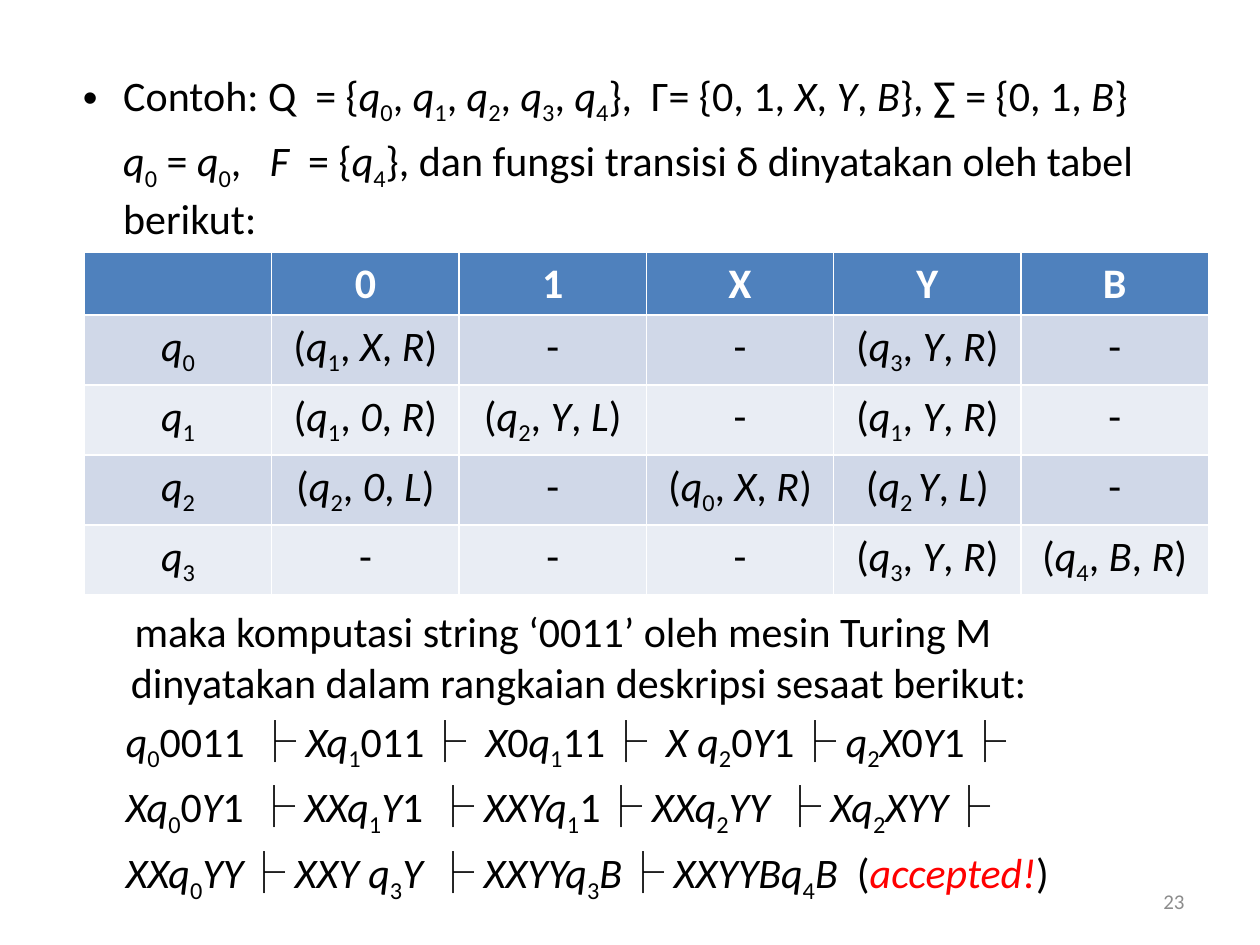
"""Build the Turing machine example slide with its transition table."""
from dataclasses import dataclass
from itertools import groupby

from lxml.etree import SubElement
from pptx import Presentation
from pptx.dml.color import RGBColor
from pptx.enum.text import MSO_ANCHOR, PP_ALIGN
from pptx.oxml.ns import qn
from pptx.util import Inches, Pt


@dataclass(frozen=True)
class Theme:
    font: str = "Calibri"
    sign: str = "Noto Sans CJK SC"
    size: int = 24
    small: int = 12
    gap: float = 4.8
    ink: str = "000000"
    light: str = "FFFFFF"
    alert: str = "FF0000"
    grey: str = "8C8C8C"
    head: str = "4F81BD"
    bands: tuple = ("D0D8E8", "E9EDF4")


@dataclass(frozen=True)
class Line:
    text: str
    margin: float
    indent: float = 0
    bullet: str = ""


@dataclass(frozen=True)
class Box:
    left: float
    top: float
    width: float
    height: float
    lines: tuple


THEME = Theme()
TURN = "├"
INTRO = Box(0.5, 0.5, 9, 1.5, (
    Line("Contoh: Q  = {*q_0_*, *q_1_*, *q_2_*, *q_3_*, *q_4_*},  "
         "Γ= {0, 1, *X*, *Y*, *B*}, ∑ = {0, 1, *B*}", 0.38, -0.32, "•"),
    Line("*q_0_* = *q_0_*,   *F*  = {*q_4_*}, dan fungsi transisi δ "
         "dinyatakan oleh tabel berikut:", 0.38),
))
TRACE = Box(0.5, 4.76, 9, 2.32, (
    Line("maka komputasi string ‘0011’ oleh mesin Turing M dinyatakan "
         "dalam rangkaian deskripsi sesaat berikut:", 0.44, 0.03),
    Line("*q_0_*0011 ├ *Xq_1_*011├  *X*0*q_1_*11├  *X q_2_*0*Y*1├ "
         "*q_2_X*0*Y*1├", 0.4),
    Line("*Xq_0_*0*Y*1 ├ *XXq_1_Y*1 ├ *XXYq_1_*1├ *XXq_2_YY* ├ "
         "*Xq_2_XYY*├", 0.4),
    Line("*XXq_0_YY*├ *XXY q_3_Y* ├ *XXYYq_3_B*├ *XXYYBq_4_B*  "
         "(*!accepted!*)", 0.4),
))
GRID = (
    ("", "0", "1", "X", "Y", "B"),
    ("*q_0_*", "(*q_1_*, *X*, *R*)", "-", "-", "(*q_3_*, *Y*, *R*)", "-"),
    ("*q_1_*", "(*q_1_*, *0*, *R*)", "(*q_2_*, *Y*, *L*)", "-",
     "(*q_1_*, *Y*, *R*)", "-"),
    ("*q_2_*", "(*q_2_*, *0*, *L*)", "-", "(*q_0_*, *X*, *R*)",
     "(*q_2 _Y*, *L*)", "-"),
    ("*q_3_*", "-", "-", "-", "(*q_3_*, *Y*, *R*)", "(*q_4_*, *B*, *R*)"),
)


def split(text: str) -> list:
    """Pair each character with its (italic, sub, alert, turn) state."""
    italic = sub = alert = False
    marks = []
    for i, char in enumerate(text):
        if char == "*":
            italic, alert = not italic, False
        elif char == "_":
            sub = not sub
        elif char == "!" and text[i - 1] == "*":
            alert = True
        else:
            turn = char == TURN
            marks.append((char, (italic and not sub, sub, alert, turn)))
    return marks


def write(para, text: str, color: str = THEME.ink, bold: bool = False) -> None:
    """Add the marked text to a paragraph as formatted runs."""
    for state, group in groupby(split(text), key=lambda mark: mark[1]):
        italic, sub, alert, turn = state
        run = para.add_run()
        run.text = "".join(char for char, _ in group)
        font = run.font
        font.name = THEME.sign if turn else THEME.font
        font.size, font.bold, font.italic = Pt(THEME.size), bold, italic
        tint = THEME.alert if alert else color
        font.color.rgb = RGBColor.from_string(tint)
        props = run._r.get_or_add_rPr()
        if sub:
            props.set("baseline", "-25000")
        if turn:
            SubElement(props, qn("a:ea"), typeface=THEME.sign)


def place(slide, box: Box) -> None:
    """Draw a text box with indented lines."""
    shape = slide.shapes.add_textbox(Inches(box.left), Inches(box.top),
                                     Inches(box.width), Inches(box.height))
    frame = shape.text_frame
    frame.word_wrap = True
    for i, line in enumerate(box.lines):
        para = frame.add_paragraph() if i else frame.paragraphs[0]
        para.space_before = Pt(THEME.gap if i else 0)
        props = para._p.get_or_add_pPr()
        props.set("marL", str(Inches(line.margin)))
        props.set("indent", str(Inches(line.indent)))
        if line.bullet:
            SubElement(props, qn("a:buFont"), typeface="Arial")
            SubElement(props, qn("a:buChar"), char=line.bullet)
        write(para, line.text)


def chart(slide) -> None:
    """Draw the transition table."""
    rows, cols = len(GRID), len(GRID[0])
    table = slide.shapes.add_table(rows, cols, Inches(0.67), Inches(2),
                                   Inches(8.92), Inches(2.7)).table
    for r, texts in enumerate(GRID):
        table.rows[r].height = Inches(0.55 if r else 0.5)
        fill = THEME.bands[(r - 1) % 2] if r else THEME.head
        for c, text in enumerate(texts):
            cell = table.cell(r, c)
            cell.fill.solid()
            cell.fill.fore_color.rgb = RGBColor.from_string(fill)
            para = cell.text_frame.paragraphs[0]
            para.alignment = PP_ALIGN.CENTER
            write(para, text, THEME.ink if r else THEME.light, not r)


def number(slide, text: str) -> None:
    """Draw the page number."""
    frame = slide.shapes.add_textbox(Inches(7.17), Inches(6.95),
                                     Inches(2.33), Inches(0.4)).text_frame
    frame.word_wrap = True
    frame.vertical_anchor = MSO_ANCHOR.MIDDLE
    frame.text = text
    para = frame.paragraphs[0]
    para.alignment = PP_ALIGN.RIGHT
    font = para.runs[0].font
    font.name, font.size = THEME.font, Pt(THEME.small)
    font.color.rgb = RGBColor.from_string(THEME.grey)


def main() -> None:
    """Build and save the slide."""
    deck = Presentation()
    deck.slide_width, deck.slide_height = Inches(10), Inches(7.5)
    slide = deck.slides.add_slide(deck.slide_layouts[6])
    for box in (INTRO, TRACE):
        place(slide, box)
    number(slide, "23")
    chart(slide)
    deck.save("out.pptx")


if __name__ == "__main__":
    main()
